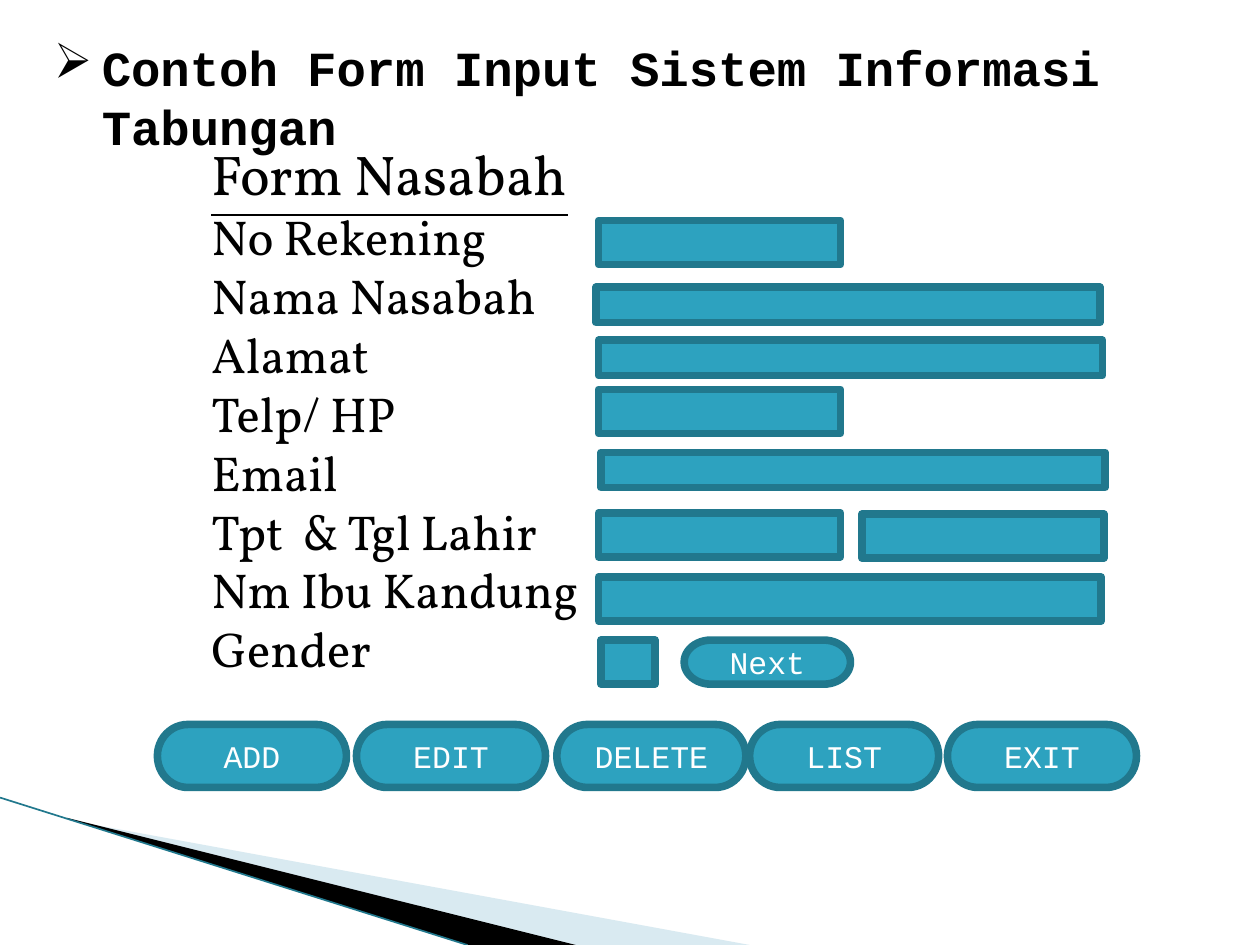
from typing import NamedTuple

from lxml import etree
from pptx import Presentation
from pptx.dml.color import RGBColor
from pptx.enum import shapes as kinds, text as txt
from pptx.oxml.ns import qn
from pptx.util import Pt

PX = 9144  # 100 px to the inch
TEAL, EDGE, BLACK, WHITE = "2DA2BF", "21788D", "000000", "FFFFFF"
MONO, SERIF = "Courier New", "Vollkorn"


class Field(NamedTuple):
    x: int
    y: int
    w: int
    h: int


class Button(NamedTuple):
    label: str
    x: int
    y: int = 575
    w: int = 150
    h: int = 50


class Wedge(NamedTuple):
    color: str
    points: list[tuple[int, int]]
    alpha: int = 100


WEDGES = [
    Wedge("A0CBDC", [(55, 651), (595, 750), (456, 750), (55, 650)], 40),
    Wedge(BLACK, [(53, 649), (457, 750), (372, 750), (54, 650)]),
]
LABELS = ["Form Nasabah", "No Rekening", "Nama Nasabah", "Alamat", "Telp/ HP",
          "Email", "Tpt  & Tgl Lahir", "Nm Ibu Kandung", "Gender"]
FIELDS = [
    Field(475, 175, 192, 35),
    Field(473, 228, 400, 28),
    Field(475, 270, 400, 28),
    Field(475, 309, 192, 35),
    Field(477, 359, 400, 28),
    Field(475, 407, 192, 35),
    Field(684, 408, 192, 35),
    Field(475, 458, 399, 35),
    Field(477, 508, 43, 35),
]
BUTTONS = [
    Button("ADD", 125), Button("EDIT", 283), Button("DELETE", 442),
    Button("LIST", 595), Button("EXIT", 752),
    Button("Next", 543, 508, 132, 35),
]


def rgb(code: str) -> RGBColor:
    return RGBColor.from_string(code)


def style(para, size: int, face: str, color: str) -> None:
    for run in para.runs:
        run.font.size = Pt(size)
        run.font.name = face
        run.font.color.rgb = rgb(color)


def paint(shape, color: str) -> None:
    shape.shadow.inherit = False
    shape.fill.solid()
    shape.fill.fore_color.rgb = rgb(color)


def block(slide, kind, x: int, y: int, w: int, h: int):
    shape = slide.shapes.add_shape(kind, x * PX, y * PX, w * PX, h * PX)
    paint(shape, TEAL)
    shape.line.color.rgb = rgb(EDGE)
    shape.line.width = Pt(4.33)
    return shape


def button(slide, item: Button) -> None:
    kind = kinds.MSO_SHAPE.FLOWCHART_TERMINATOR
    shape = block(slide, kind, item.x, item.y, item.w, item.h)
    frame = shape.text_frame
    frame.text = item.label
    frame.vertical_anchor = txt.MSO_ANCHOR.MIDDLE
    para = frame.paragraphs[0]
    para.alignment = txt.PP_ALIGN.CENTER
    style(para, 18, MONO, WHITE)


def wedge(slide, item: Wedge) -> None:
    first, *rest = item.points
    pen = slide.shapes.build_freeform(*first, scale=PX)
    pen.add_line_segments(rest, close=True)
    shape = pen.convert_to_shape()
    paint(shape, item.color)
    shape.line.fill.background()
    if item.alpha < 100:
        tone = shape._element.spPr.find(".//" + qn("a:srgbClr"))
        etree.SubElement(tone, qn("a:alpha"), val=str(item.alpha * 1000))


def box(slide, x: int, y: int, w: int, h: int, lines: list[str]):
    frame = slide.shapes.add_textbox(x * PX, y * PX, w * PX, h * PX).text_frame
    frame.word_wrap = True
    frame.auto_size = txt.MSO_AUTO_SIZE.SHAPE_TO_FIT_TEXT
    frame.text = "\n".join(lines)
    return frame.paragraphs


def main() -> None:
    deck = Presentation()
    deck.slide_width, deck.slide_height = 1000 * PX, 750 * PX
    slide = deck.slides.add_slide(deck.slide_layouts[6])

    # Corner decoration
    for item in WEDGES:
        wedge(slide, item)
    line = slide.shapes.add_connector(
        kinds.MSO_CONNECTOR.STRAIGHT, 0, 633 * PX, 371 * PX, 750 * PX)
    line.line.color.rgb = rgb(EDGE)
    line.line.width = Pt(0.95)
    etree.SubElement(line._element.spPr, qn("a:effectLst"))

    # Title with arrow bullet
    title = box(slide, 33, 25, 967, 57,
                ["Contoh Form Input Sistem Informasi Tabungan"])[0]
    props = title._p.get_or_add_pPr()
    props.set("marL", str(38 * PX))
    props.set("indent", str(-38 * PX))
    etree.SubElement(props, qn("a:buChar"), char="➢")
    style(title, 28, MONO, BLACK)
    title.runs[0].font.bold = True

    # Form heading and labels
    head, *rows = box(slide, 158, 106, 744, 441, LABELS)
    style(head, 32, SERIF, BLACK)
    head.runs[0].font.underline = True
    for row in rows:
        style(row, 28, SERIF, BLACK)

    # Input fields and buttons
    for field in FIELDS:
        block(slide, kinds.MSO_SHAPE.RECTANGLE, *field)
    for item in BUTTONS:
        button(slide, item)

    deck.save("out.pptx")


if __name__ == "__main__":
    main()
